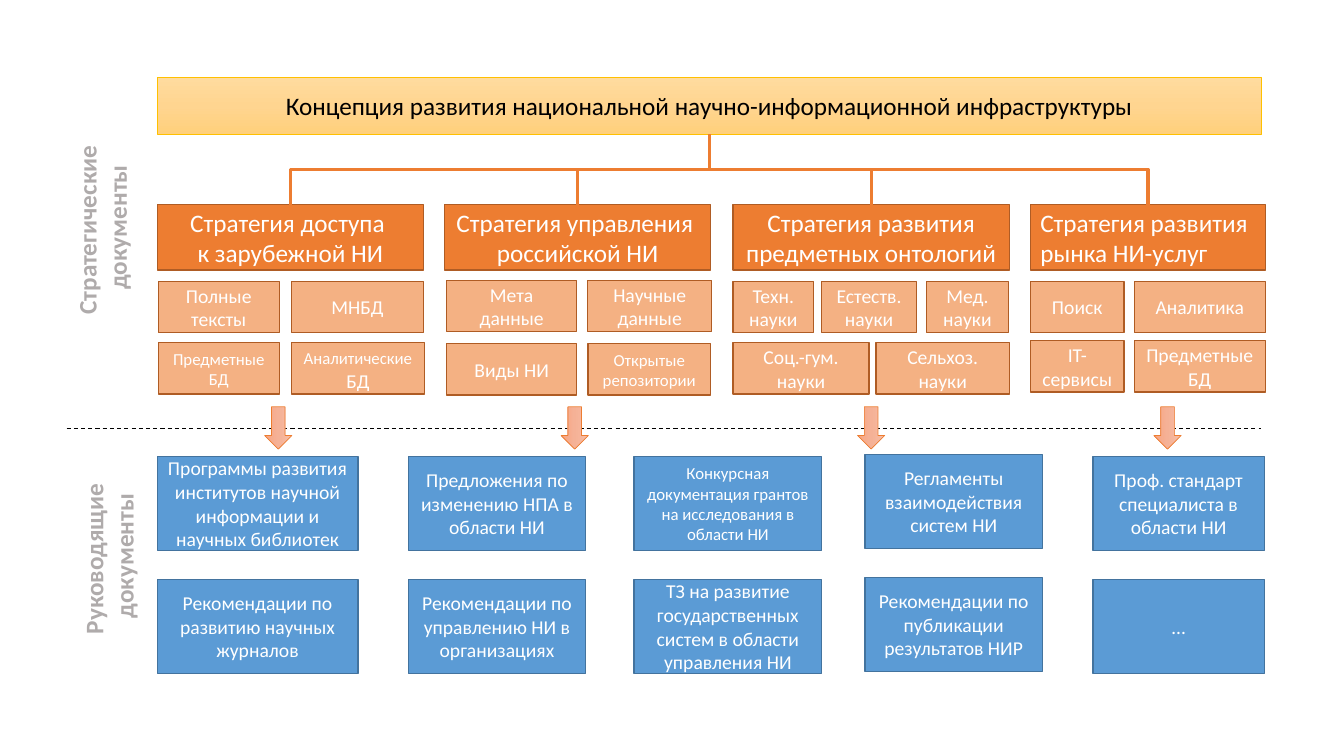
from copy import deepcopy
from dataclasses import dataclass

from pptx import Presentation
from pptx.dml.color import RGBColor
from pptx.enum.dml import MSO_LINE
from pptx.enum.shapes import MSO_CONNECTOR, MSO_SHAPE
from pptx.enum.text import MSO_ANCHOR, MSO_AUTO_SIZE, PP_ALIGN
from pptx.oxml.ns import qn
from pptx.oxml.xmlchemy import OxmlElement
from pptx.util import Pt

PX = 9144  # 100 px to the inch


@dataclass(frozen=True)
class Theme:
    font: str = "Calibri"
    large: int = 18
    medium: int = 14
    small: int = 12
    white: str = "FFFFFF"
    black: str = "000000"
    label: str = "AFABAB"
    branch: str = "ED7D31"
    # Box styles: fill (one colour or gradient stops), line colour, line width
    concept: tuple = (("FFDB9E", "FFD590", "FFD07C"), "FFC000", 0.5)
    strategy: tuple = ("ED7D31", "AF5C24", 1)
    topic: tuple = ("F4B183", "AF5C24", 1)
    document: tuple = ("5B9BD5", "43739E", 1)
    arrow: tuple = (("F7BDA5", "F5B196", "F8A582"), "ED7D31", 0.5)


THEME = Theme()

CONCEPT = "Концепция развития национальной научно-информационной инфраструктуры"

# Left, width, heading, alignment, then topic rows: top offset and (left offset, width, text, size)
STRATEGIES = [
    (156, 264, "Стратегия доступа \nк зарубежной НИ", PP_ALIGN.CENTER, [
        (76, [(1, 120, "Полные тексты", 14), (133, 131, "МНБД", 14)]),
        (137, [(1, 120, "Предметные БД", 12),
               (133, 132, [("Аналитические", 12), (" БД", 14)], None)])]),
    (441, 264, "Стратегия управления \nроссийской НИ", PP_ALIGN.CENTER, [
        (75, [(2, 129, "Мета данные", 14), (142, 123, "Научные данные", 14)]),
        (138, [(2, 129, "Виды НИ", 14), (142, 122, "Открытые репозитории", 12)])]),
    (727, 274, "Стратегия развития предметных онтологий", PP_ALIGN.CENTER, [
        (76, [(0, 80, "Техн. науки", 14), (88, 94, "Естеств. науки", 14),
              (192, 81, "Мед. науки", 14)]),
        (137, [(0, 135, "Соц.-гум. науки", 14), (142, 132, "Сельхоз. науки", 14)])]),
    (1022, 233, "Стратегия развития \nрынка НИ-услуг", PP_ALIGN.LEFT, [
        (76, [(0, 93, "Поиск", 14), (103, 130, "Аналитика", 14)]),
        (135, [(0, 93, "IT-сервисы", 14), (103, 130, "Предметные БД", 14)])]),
]

# Left, width, top offset, then (text, size) from top to bottom
DOCUMENTS = [
    (156, 199, 2, [("Программы развития институтов научной информации и научных библиотек", 14),
                   ("Рекомендации по развитию научных журналов", 14)]),
    (405, 176, 2, [("Предложения по изменению НПА в области НИ", 14),
                   ("Рекомендации по управлению НИ в организациях", 14)]),
    (629, 186, 2, [("Конкурсная документация грантов на исследования в области НИ", 12),
                   ("ТЗ на развитие государственных систем в области управления НИ", 14)]),
    (858, 176, 0, [("Регламенты взаимодействия систем НИ", 14),
                   ("Рекомендации по публикации результатов НИР", 14)]),
    (1084, 170, 2, [("Проф. стандарт специалиста в области НИ", 14), ("…", 14)]),
]


def color(value):
    return RGBColor.from_string(value)


def scaled(*lengths):
    return [round(length * PX) for length in lengths]


def set_line(line, line_color, width):
    line.color.rgb = color(line_color)
    line.width = Pt(width)


def paint(shape, style):
    fill_value, line_color, width = style
    shape.shadow.inherit = False
    if isinstance(fill_value, str):
        shape.fill.solid()
        shape.fill.fore_color.rgb = color(fill_value)
    else:
        shape.fill.gradient()
        shape.fill.gradient_angle = 270
        stops = shape._element.spPr.find(qn("a:gradFill")).find(qn("a:gsLst"))
        stops.insert(1, deepcopy(stops[0]))
        for index, stop in enumerate(shape.fill.gradient_stops):
            stop.color.rgb = color(fill_value[index])
            stop.position = index / 2
    set_line(shape.line, line_color, width)


def write(shape, text, size, text_color, align=PP_ALIGN.CENTER, bold=False):
    """Fill in one paragraph; text is a string or a list of (string, size)."""
    paragraph = shape.text_frame.paragraphs[0]
    paragraph.alignment = align
    for part, part_size in [(text, size)] if isinstance(text, str) else text:
        for index, line in enumerate(part.split("\n")):
            if index:
                paragraph.add_line_break()
            run = paragraph.add_run()
            run.text = line
            run.font.color.rgb = color(text_color)
            formats = {"name": THEME.font, "size": Pt(part_size), "bold": bold}
            for name, value in formats.items():
                setattr(run.font, name, value)


def add_box(slide, box, style, text, size, text_color=THEME.white, align=PP_ALIGN.CENTER):
    shape = slide.shapes.add_shape(MSO_SHAPE.RECTANGLE, *scaled(*box))
    paint(shape, style)
    shape.text_frame.word_wrap = True
    shape.text_frame.vertical_anchor = MSO_ANCHOR.MIDDLE
    write(shape, text, size, text_color, align)
    return shape


def add_line(slide, kind, ends, line_color, width):
    connector = slide.shapes.add_connector(kind, *scaled(*ends))
    set_line(connector.line, line_color, width)
    connector._element.spPr.append(OxmlElement("a:effectLst"))
    return connector


def add_branch(slide, parent, child):
    """Elbow that leaves the parent downwards, so its frame is turned a quarter."""
    connector = add_line(slide, MSO_CONNECTOR.ELBOW, (0, 0, 1, 1), THEME.branch, 2.25)
    connector.begin_connect(parent, 2)
    connector.end_connect(child, 0)
    start, end = parent.left + parent.width // 2, child.left + child.width // 2
    bottom = parent.top + parent.height
    drop, span = child.top - bottom, abs(end - start)
    frame = {"left": (start + end - drop) // 2, "top": bottom + (drop - span) // 2,
             "width": drop, "height": span}
    for name, value in frame.items():
        setattr(connector, name, value)
    to_right = end > start
    transform = connector._element.spPr.find(qn("a:xfrm"))
    transform.set("rot", str((270 if to_right else 90) * 60000))
    transform.set("flipH", "1" if to_right else "0")


def add_side_label(slide, box, text):
    label = slide.shapes.add_textbox(*scaled(*box))
    label.rotation = 270
    label.text_frame.word_wrap = False
    label.text_frame.auto_size = MSO_AUTO_SIZE.SHAPE_TO_FIT_TEXT
    write(label, text, THEME.large, THEME.label, bold=True)


def add_strategies(slide, left, top, width):
    concept = add_box(slide, (left, top, width, 56), THEME.concept, CONCEPT,
                      THEME.large, THEME.black)
    heading_top = top + 126
    for column_left, column_width, heading, align, rows in STRATEGIES:
        strategy = add_box(slide, (column_left, heading_top, column_width, 65),
                           THEME.strategy, heading, THEME.large, align=align)
        add_branch(slide, concept, strategy)
        for row_top, topics in rows:
            for offset, topic_width, text, size in topics:
                box = (column_left + offset, heading_top + row_top, topic_width, 51)
                add_box(slide, box, THEME.topic, text, size)


def add_arrows(slide, left, top):
    for index in range(len(STRATEGIES)):
        box = (left + 294 * index, top, 42, 27)
        arrow = slide.shapes.add_shape(MSO_SHAPE.RIGHT_ARROW, *scaled(*box))
        arrow.rotation = 90
        paint(arrow, THEME.arrow)


def add_documents(slide, top):
    for left, width, offset, documents in DOCUMENTS:
        for row, (text, size) in enumerate(documents):
            box = (left, top + offset + 122 * row, width, 93)
            add_box(slide, box, THEME.document, text, size)


def main():
    presentation = Presentation()
    presentation.slide_width, presentation.slide_height = scaled(1333, 750)
    slide = presentation.slides.add_slide(presentation.slide_layouts[6])
    divider = add_line(slide, MSO_CONNECTOR.STRAIGHT, (66, 425, 1251, 425), THEME.black, 0.75)
    divider.line.dash_style = MSO_LINE.DASH
    add_strategies(slide, 156, 77, 1095)
    add_arrows(slide, 255, 411)
    add_documents(slide, 451)
    add_side_label(slide, (4, 190, 195, 71), "Стратегические \nдокументы")
    add_side_label(slide, (20, 516, 176, 71), "Руководящие \nдокументы")
    presentation.save("out.pptx")


if __name__ == "__main__":
    main()
